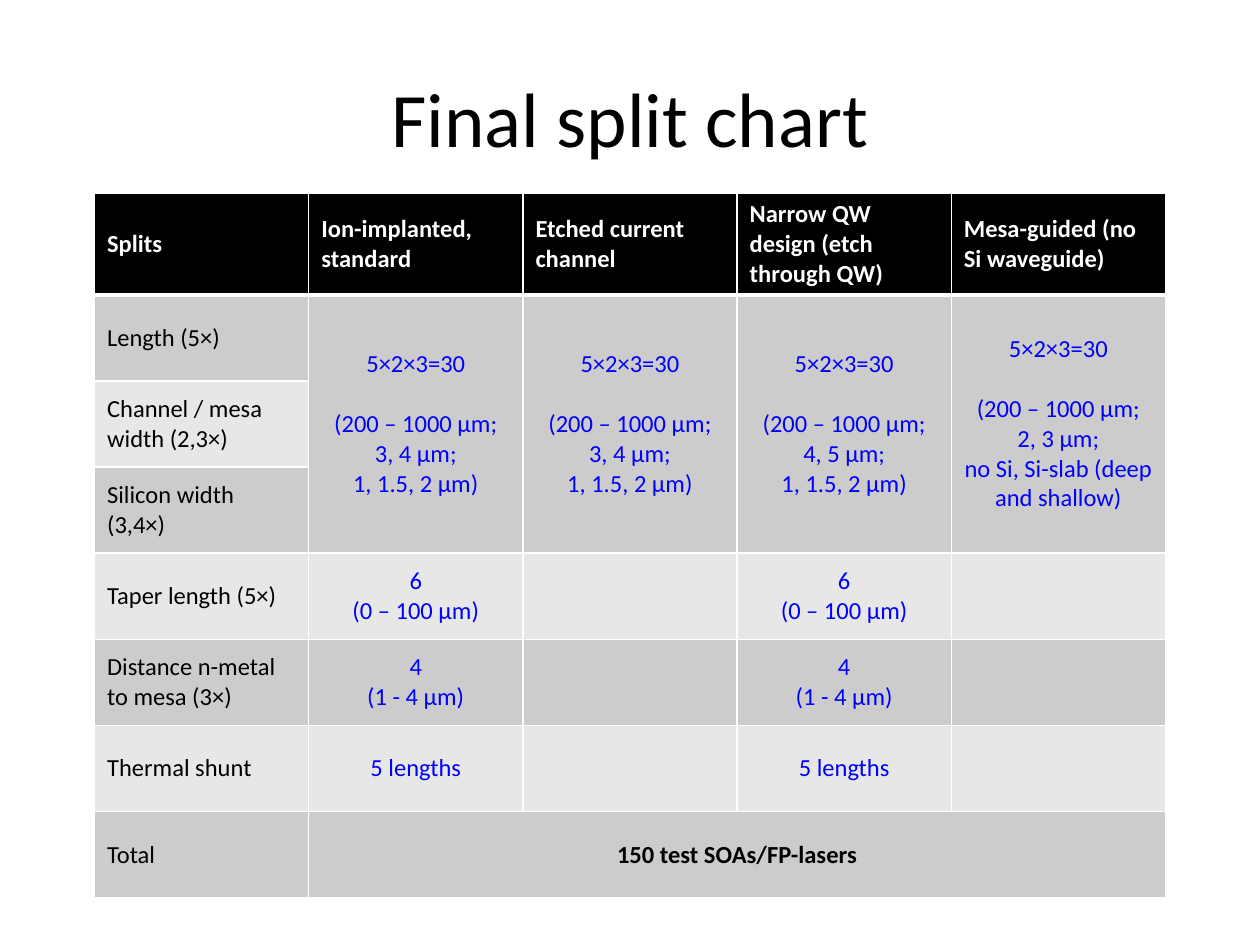
import dataclasses
import typing

import pptx
import pptx.dml.color
import pptx.enum.text
import pptx.oxml
import pptx.oxml.ns
import pptx.util

INK = {"black": "000000", "white": "FFFFFF", "blue": "0000FF",
       "dark": "CCCCCC", "light": "E7E7E7"}
FONT = "Calibri"
WIDE, HIGH = 10, 7.5
COLS, ROWS = 5, 8
ALIGN = pptx.enum.text.PP_ALIGN
MIDDLE = pptx.enum.text.MSO_ANCHOR.MIDDLE


@dataclasses.dataclass
class Entry:
    row: int
    col: int
    text: str
    ink: str = "black"
    bold: bool = False
    align: typing.Any = ALIGN.LEFT
    down: int = 1
    across: int = 1
    gap: int = 0


def color(name: str) -> pptx.dml.color.RGBColor:
    return pptx.dml.color.RGBColor.from_string(INK[name])


def style(para, size: int, ink: str, bold: bool, align) -> None:
    para.alignment = align
    for run in para.runs:
        run.font.name = FONT
        run.font.size = pptx.util.Pt(size)
        run.font.bold = bold
        run.font.color.rgb = color(ink)


def edge(cell, side: str, width: float) -> None:
    cell._tc.get_or_add_tcPr().append(pptx.oxml.parse_xml(
        f'<a:ln{side} {pptx.oxml.ns.nsdecls("a")} w="{pptx.util.Pt(width)}">'
        f'<a:solidFill><a:srgbClr val="{INK["white"]}"/></a:solidFill>'
        f'</a:ln{side}>'))


def paint(cell, row: int) -> None:
    widths = {"L": 1, "R": 1, "T": 3 if row == 1 else 1, "B": 3 if row == 0 else 1}
    for side, width in widths.items():
        edge(cell, side, width)
    cell.fill.solid()
    cell.fill.fore_color.rgb = color(
        "black" if row == 0 else "dark" if row % 2 else "light")
    cell.vertical_anchor = MIDDLE


def write(table, entry: Entry) -> None:
    cell = table.cell(entry.row, entry.col)
    if entry.down * entry.across > 1:
        cell.merge(table.cell(entry.row + entry.down - 1,
                              entry.col + entry.across - 1))
    frame = cell.text_frame
    frame.text = entry.text
    for para in frame.paragraphs:
        style(para, 14, entry.ink, entry.bold, entry.align)
    if entry.gap:
        frame.paragraphs[1].space_before = pptx.util.Pt(entry.gap)


def entries() -> typing.List[Entry]:
    heads = ["Splits", "Ion-implanted, standard", "Etched current channel",
             "Narrow QW design (etch through QW)", "Mesa-guided (no Si waveguide)"]
    labels = ["Length (5×)", "Channel / mesa width (2,3×)", "Silicon width (3,4×)",
              "Taper length (5×)", "Distance n-metal to mesa (3×)",
              "Thermal shunt", "Total"]
    ranges = [("3, 4", "1, 1.5, 2 μm)"), ("3, 4", "1, 1.5, 2 μm)"),
              ("4, 5", "1, 1.5, 2 μm)"), ("2, 3", "no Si, Si-slab (deep and shallow)")]
    extras = ["6\n(0 – 100 μm)", "4\n(1 - 4 μm)", "5 lengths"]
    found = [Entry(0, col, head, "white", True) for col, head in enumerate(heads)]
    found += [Entry(row, 0, label) for row, label in enumerate(labels, 1)]
    found += [Entry(1, col, f"5×2×3=30\n(200 – 1000 μm;\n{width} μm;\n{last}",
                    "blue", align=ALIGN.CENTER, down=3, gap=17)
              for col, (width, last) in enumerate(ranges, 1)]
    found += [Entry(row, col, extra, "blue", align=ALIGN.CENTER)
              for row, extra in enumerate(extras, 4) for col in (1, 3)]
    found.append(Entry(7, 1, "150 test SOAs/FP-lasers", bold=True,
                       align=ALIGN.CENTER, across=4))
    return found


def main() -> None:
    deck = pptx.Presentation()
    deck.slide_width = pptx.util.Inches(WIDE)
    deck.slide_height = pptx.util.Inches(HIGH)
    wide, high = deck.slide_width, deck.slide_height
    slide = deck.slides.add_slide(deck.slide_layouts[5])

    title = slide.shapes.title
    title.left, title.top = int(wide * 0.05), int(high * 0.04)
    title.width, title.height = int(wide * 0.9), pptx.util.Inches(1.25)
    title.text_frame.text = "Final split chart"
    title.text_frame.vertical_anchor = MIDDLE
    style(title.text_frame.paragraphs[0], 44, "black", False, ALIGN.CENTER)

    table = slide.shapes.add_table(
        ROWS, COLS, int(wide * 0.075), pptx.util.Inches(1.53),
        int(wide * 0.85), pptx.util.Inches(5.47)).table
    for entry in entries():
        write(table, entry)
    for row in range(ROWS):
        for col in range(COLS):
            cell = table.cell(row, col)
            if not cell.is_spanned:
                paint(cell, row)
    deck.save("out.pptx")


if __name__ == "__main__":
    main()
